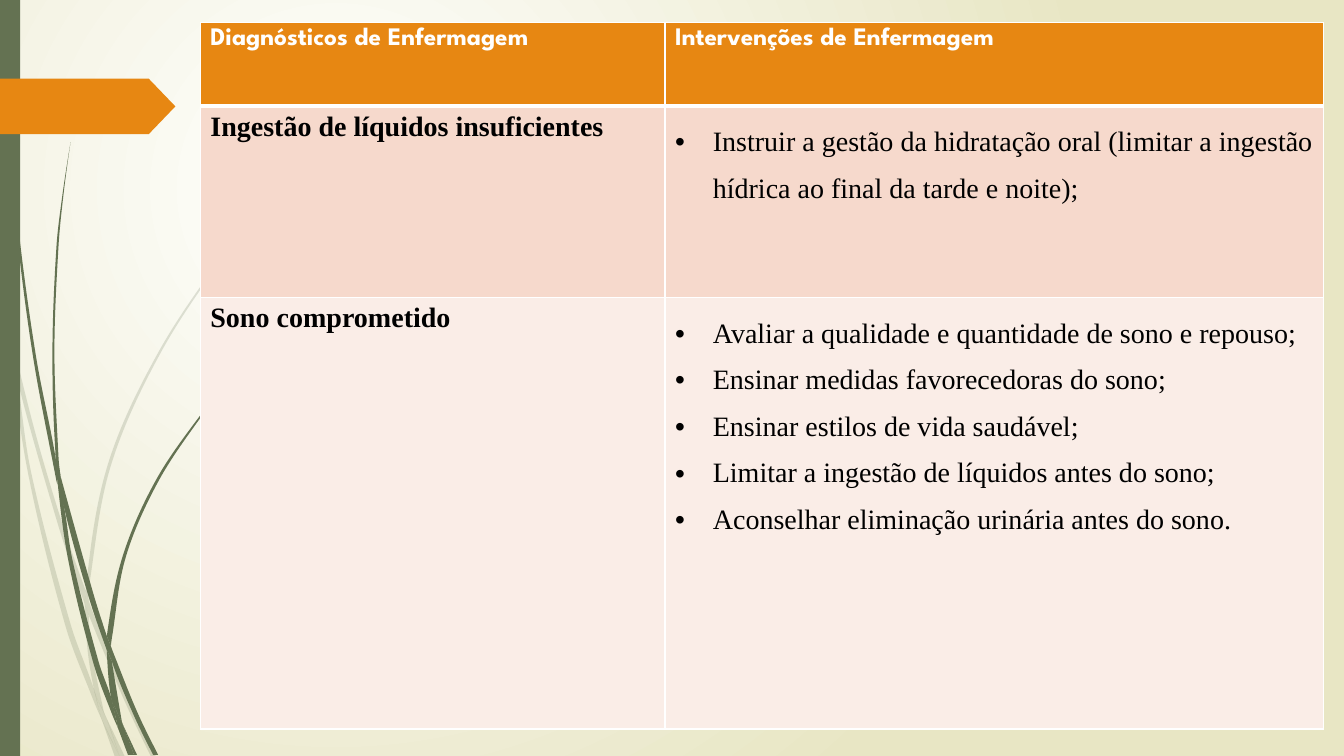
from pptx import Presentation
from pptx.dml.color import RGBColor
from pptx.enum.shapes import MSO_SHAPE
from pptx.enum.text import PP_ALIGN
from pptx.oxml.ns import qn
from pptx.util import Pt
from lxml import etree

RECTANGLE = MSO_SHAPE.RECTANGLE
PENTAGON = MSO_SHAPE.PENTAGON
JUSTIFY = PP_ALIGN.JUSTIFY

GREEN, ORANGE, WHITE, BLACK, SAND = "647252", "E78712", "FFFFFF", "000000", "E8E6C4"
ROW_FILLS = [ORANGE, "F6D9CC", "FAEDE7"]
HEADINGS = ["Diagnósticos de Enfermagem", "Intervenções de Enfermagem"]
DIAGNOSES = [
    ("Ingestão de líquidos insuficientes", [
        "Instruir a gestão da hidratação oral (limitar a ingestão hídrica ao final da tarde e noite);",
    ]),
    ("Sono comprometido", [
        "Avaliar a qualidade e quantidade de sono e repouso;",
        "Ensinar medidas favorecedoras do sono;",
        "Ensinar estilos de vida saudável;",
        "Limitar a ingestão de líquidos antes do sono;",
        "Aconselhar eliminação urinária antes do sono.",
    ]),
]
COLUMN_WIDTHS = [331.9, 470.2]
ROW_HEIGHTS = [59.8, 136.8, 308.2]

GRASS_UNIT = 0.72
PALE_BLADES = [
    ([(0, 299), (10, 344), (11, 350)], [(0, 282), (9, 322), (11, 350)]),
    ([(14, 345), (17, 376), (58, 522), (84, 599)], [(14, 345), (36, 433), (62, 520), (85, 586)]),
    ([(88, 610), (123, 694), (150, 751)], [(88, 596), (92, 607), (127, 692), (155, 751)]),
    ([(105, 711), (119, 751)], [(105, 711), (124, 751)]),
    ([(11, 350), (28, 470), (65, 621), (92, 693), (101, 714)],
     [(11, 350), (17, 376), (31, 469), (70, 619), (93, 683), (99, 707), (101, 714)]),
    ([(84, 599), (87, 646), (93, 683), (96, 692), (105, 711)],
     [(88, 610), (91, 646), (103, 706), (105, 711)]),
    ([(312, 153), (289, 175), (268, 197), (228, 244), (158, 348), (107, 461), (85, 586)],
     [(312, 154), (290, 175), (268, 198), (229, 245), (160, 349), (110, 462), (88, 584), (88, 596)]),
    ([(101, 714), (114, 751)], [(101, 714), (119, 751)]),
    ([(85, 586), (84, 599)], [(88, 596), (88, 610)]),
    ([(93, 683), (99, 707), (101, 714), (119, 751)], [(93, 683), (96, 692), (105, 711), (119, 751)]),
]
DARK_BLADES = [
    ([(3, 0), (4, 48), (7, 110), (17, 233), (33, 355), (56, 477), (57, 481)],
     [(4, 0), (5, 48), (8, 109), (19, 232), (36, 355), (55, 453), (57, 481)]),
    ([(60, 472), (64, 505), (88, 592), (106, 645)], [(60, 472), (93, 590), (106, 631)]),
    ([(110, 641), (111, 656), (132, 708), (152, 749)], [(110, 641), (113, 649), (136, 706), (157, 749)]),
    ([(57, 477), (68, 557), (93, 659), (111, 708), (117, 722)],
     [(57, 477), (64, 505), (72, 556), (98, 657), (110, 691), (116, 717), (117, 722)]),
    ([(70, 141), (62, 193), (56, 245), (52, 349), (55, 449), (60, 472)],
     [(70, 141), (63, 193), (58, 245), (54, 349), (58, 453), (60, 472)]),
    ([(122, 719), (133, 749)], [(122, 719), (136, 749)]),
    ([(55, 449), (57, 477), (64, 505)], [(55, 449), (60, 472), (64, 505)]),
    ([(260, 344), (245, 358), (231, 373), (204, 405), (156, 474), (122, 551), (106, 631)],
     [(261, 344), (245, 359), (231, 374), (205, 406), (158, 476), (125, 552), (111, 633), (110, 641)]),
    ([(117, 722), (127, 749)], [(117, 722), (131, 749)]),
    ([(106, 645), (110, 691), (116, 706), (122, 719)], [(111, 656), (121, 716), (122, 719)]),
    ([(106, 631), (106, 645)], [(110, 641), (111, 656)]),
    ([(110, 691), (116, 717), (117, 722), (130, 749)], [(110, 691), (116, 706), (122, 719), (133, 749)]),
]


def color(hex_code):
    """Turn a hex string into a colour."""
    return RGBColor.from_string(hex_code)


def paint(shape, hex_code):
    """Give a shape a plain fill without line or shadow."""
    shape.shadow.inherit = False
    shape.fill.solid()
    shape.fill.fore_color.rgb = color(hex_code)
    shape.line.fill.background()


def secant(start, end):
    """Return the sideways slope between two knots."""
    return (end[0] - start[0]) / (end[1] - start[1])


def curve_edge(knots):
    """Return knots and control points of a smooth curve running down."""
    inner = [secant(a, b) for a, b in zip(knots, knots[2:])]
    first, last = secant(*knots[:2]), secant(*knots[-2:])
    if inner:
        first, last = (3 * first - inner[0]) / 2, (3 * last - inner[-1]) / 2
    slopes = [first, *inner, last]
    points = [knots[0]]
    for i, ((x0, y0), (x1, y1)) in enumerate(zip(knots, knots[1:])):
        third = (y1 - y0) / 3
        points += [(x0 + slopes[i] * third, y0 + third),
                   (x1 - slopes[i + 1] * third, y1 - third), (x1, y1)]
    return points


def draw_blade(page, box, edges, alpha):
    """Draw one piece of grass with the given opacity in percent."""
    near, far = map(curve_edge, edges)
    far.reverse()
    outline = [(Pt(box[0] + x * GRASS_UNIT), Pt(box[1] + y * GRASS_UNIT))
               for x, y in near + [near[-1], far[0]] + far]
    builder = page.shapes.build_freeform(*outline[0])
    builder.add_line_segments(outline[1:], close=True)
    blade = builder.convert_to_shape()
    paint(blade, GREEN)
    lines = list(blade._element.iter(qn("a:lnTo")))
    for triple in zip(lines[::3], lines[1::3], lines[2::3]):
        curve = etree.Element(qn("a:cubicBezTo"))
        triple[0].addprevious(curve)
        for line in triple:
            curve.append(line[0])
            line.getparent().remove(line)
    if alpha < 100:
        fill_color = blade._element.spPr.find(qn("a:solidFill"))[0]
        etree.SubElement(fill_color, qn("a:alpha"), val=str(alpha * 1000))


def draw_background(page):
    """Fill the page with a round gradient from white to sand."""
    fill = page.background.fill
    fill.gradient()
    for stop, hex_code in zip(fill.gradient_stops, [WHITE, SAND]):
        stop.color.rgb = color(hex_code)
    gradient = page._element.find(".//" + qn("a:gradFill"))
    gradient.remove(gradient.find(qn("a:lin")))
    circle = etree.Element(qn("a:path"), path="circle")
    etree.SubElement(circle, qn("a:fillToRect"), l="50000", t="50000", r="100000", b="100000")
    gradient.find(qn("a:gsLst")).addnext(circle)


def draw_side_decoration(page, box):
    """Draw the grass, the side bar and the orange arrow."""
    left, top, _, height = box
    for blades, alpha in [(PALE_BLADES, 20), (DARK_BLADES, 100)]:
        for edges in blades:
            draw_blade(page, box, edges, alpha)
    bar = page.shapes.add_shape(RECTANGLE, Pt(left), Pt(top), Pt(14.4), Pt(height))
    paint(bar, GREEN)
    arrow = page.shapes.add_shape(PENTAGON, Pt(left), Pt(top + 56.2), Pt(125.3), Pt(39.6))
    arrow.adjustments[0] = 0.48
    paint(arrow, ORANGE)


def style_cell(cell, row):
    """Set the borders and fill of a cell by its row."""
    widths = {"L": 1, "R": 1, "T": 3 if row == 1 else 1, "B": 3 if row == 0 else 1}
    properties = cell._tc.get_or_add_tcPr()
    for side, width in widths.items():
        line = etree.SubElement(properties, qn("a:ln" + side), w=str(Pt(width)))
        solid = etree.SubElement(line, qn("a:solidFill"))
        etree.SubElement(solid, qn("a:srgbClr"), val=WHITE)
    cell.fill.solid()
    cell.fill.fore_color.rgb = color(ROW_FILLS[row])


def write_cell(cell, lines, font_name, size, hex_code, bold):
    """Write lines into a cell, one paragraph each."""
    cell.text_frame.text = "\n".join(lines)
    for para in cell.text_frame.paragraphs:
        for span in para.runs:
            span.font.name, span.font.size, span.font.bold = font_name, Pt(size), bold
            span.font.color.rgb = color(hex_code)


def add_bullets(cell):
    """Turn the paragraphs of a cell into a justified bullet list."""
    for para in cell.text_frame.paragraphs:
        para.alignment, para.line_spacing = JUSTIFY, 1.5
        properties = para._p.get_or_add_pPr()
        properties.set("marL", str(Pt(27)))
        properties.set("indent", str(-Pt(27)))
        etree.SubElement(properties, qn("a:buFont"), typeface="Arial")
        etree.SubElement(properties, qn("a:buChar"), char="•")


def draw_care_table(page, box):
    """Draw the table of diagnoses and interventions."""
    frame = page.shapes.add_table(len(ROW_HEIGHTS), len(COLUMN_WIDTHS), *map(Pt, box))
    table = frame.table
    for column, width in zip(table.columns, COLUMN_WIDTHS):
        column.width = Pt(width)
    for row, height in enumerate(ROW_HEIGHTS):
        table.rows[row].height = Pt(height)
        for cell in table.rows[row].cells:
            style_cell(cell, row)
    for column, heading in enumerate(HEADINGS):
        write_cell(table.cell(0, column), [heading], "League Spartan", 18, WHITE, True)
    for row, (diagnosis, interventions) in enumerate(DIAGNOSES, start=1):
        write_cell(table.cell(row, 0), [diagnosis], "Times New Roman", 20, BLACK, True)
        write_cell(table.cell(row, 1), interventions, "Times New Roman", 20, BLACK, False)
        add_bullets(table.cell(row, 1))


def main():
    """Build the deck and save it."""
    deck = Presentation()
    deck.slide_width, deck.slide_height = Pt(960), Pt(540)
    page = deck.slides.add_slide(deck.slide_layouts[6])
    draw_background(page)
    draw_side_decoration(page, (0, 0, 225, 540))
    draw_care_table(page, (143.1, 16, sum(COLUMN_WIDTHS), sum(ROW_HEIGHTS)))
    deck.save("out.pptx")


if __name__ == "__main__":
    main()
